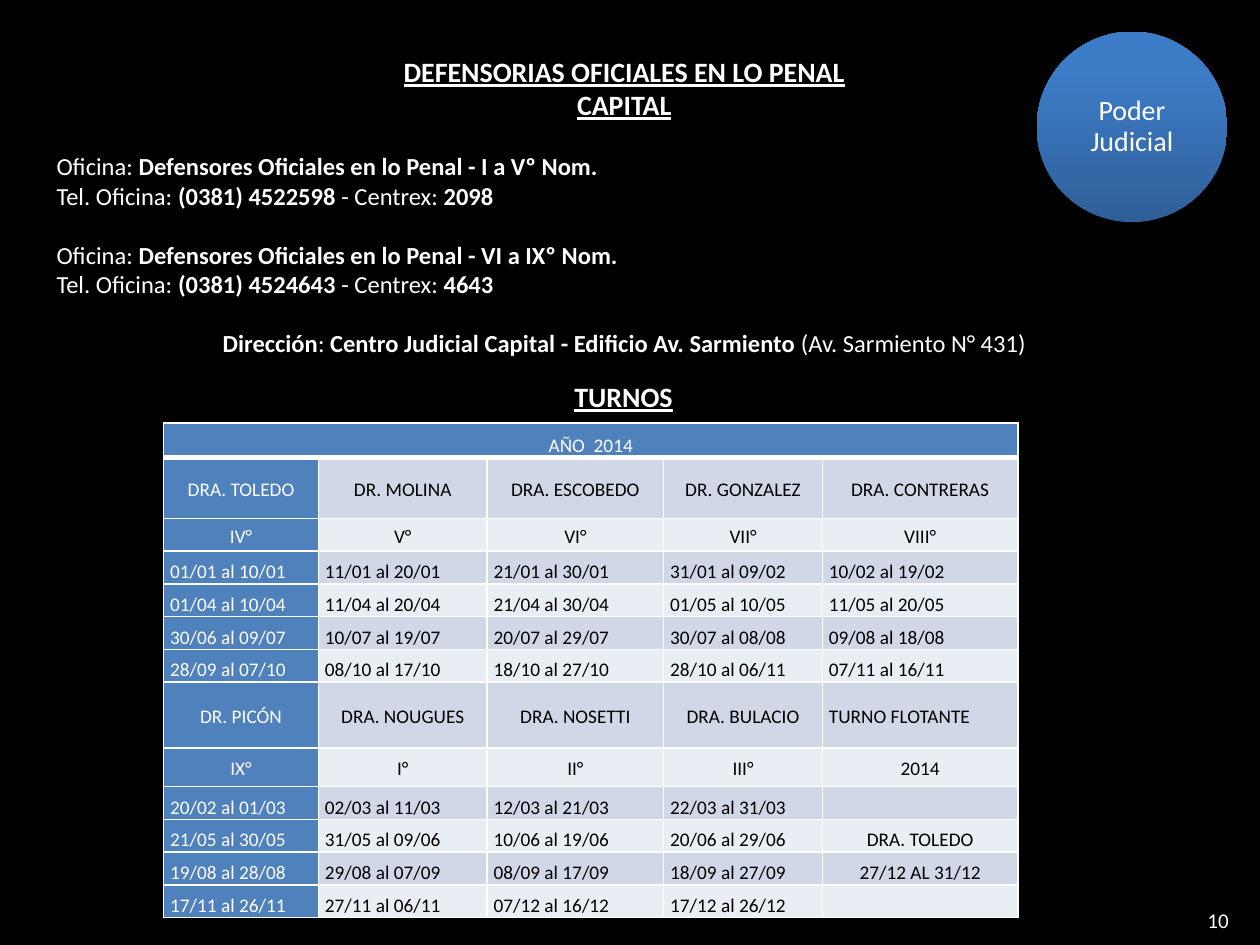
from lxml.etree import SubElement
from pptx import Presentation
from pptx.dml.color import RGBColor
from pptx.enum.shapes import MSO_SHAPE
from pptx.enum.text import MSO_ANCHOR, PP_ALIGN
from pptx.oxml.ns import qn
from pptx.util import Cm, Pt

THEME = {
    "font": "Calibri",
    "black": RGBColor(0x00, 0x00, 0x00),
    "white": RGBColor(0xFF, 0xFF, 0xFF),
    "header": RGBColor(0x4F, 0x81, 0xBD),
    "bands": [RGBColor(0xE9, 0xED, 0xF4), RGBColor(0xD0, 0xD8, 0xE8)],
    "circle": [RGBColor(0x2F, 0x5F, 0x99), RGBColor(0x3D, 0x7C, 0xC7)],
    "title": Pt(16),
    "body": Pt(14),
    "number": Pt(12),
    "table": Pt(11),
}


def apply_format(target, **values):
    for name, value in values.items():
        setattr(target, name, value)


def add_run(paragraph, text, size, color=THEME["white"], **values):
    run = paragraph.add_run()
    run.text = text
    run.font.color.rgb = color
    apply_format(run.font, name=THEME["font"], size=size, **values)


presentation = Presentation()
apply_format(presentation, slide_width=Cm(25.4), slide_height=Cm(19.05))
slide = presentation.slides.add_slide(presentation.slide_layouts[6])
slide.background.fill.solid()
slide.background.fill.fore_color.rgb = THEME["black"]

details = slide.shapes.add_textbox(Cm(0.89), Cm(0.97), Cm(23.39), Cm(7.01)).text_frame
details.word_wrap = True
for index, title in enumerate(["DEFENSORIAS OFICIALES EN LO PENAL", "CAPITAL"]):
    paragraph = details.add_paragraph() if index else details.paragraphs[0]
    paragraph.alignment = PP_ALIGN.CENTER
    add_run(paragraph, title, THEME["title"], bold=True, underline=True)

offices = [
    ("I a Vº Nom.", "(0381) 4522598", "2098"),
    ("VI a IXº Nom.", "(0381) 4524643", "4643"),
]
detail_lines = []
for courts, telephone, extension in offices:
    detail_lines += [
        (PP_ALIGN.LEFT, 17, ["Oficina: ", f"Defensores Oficiales en lo Penal - {courts}"]),
        (PP_ALIGN.LEFT, 0, ["Tel. Oficina: ", telephone, " - Centrex: ", extension]),
    ]
address = ["", "Dirección", ": ", "Centro Judicial Capital - Edificio Av. Sarmiento", " (Av. Sarmiento N° 431)"]
detail_lines.append((PP_ALIGN.CENTER, 17, address))
for alignment, gap, segments in detail_lines:
    paragraph = details.add_paragraph()
    apply_format(paragraph, alignment=alignment, space_before=Pt(gap))
    for index, segment in enumerate(segments):
        if segment:
            add_run(paragraph, segment, THEME["body"], bold=index % 2 == 1)

table_rows = [
    ["AÑO  2014", "", "", "", ""],
    ["DRA. TOLEDO", "DR. MOLINA", "DRA. ESCOBEDO", "DR. GONZALEZ", "DRA. CONTRERAS"],
    ["IV°", "V°", "VI°", "VII°", "VIII°"],
    ["01/01 al 10/01", "11/01 al 20/01", "21/01 al 30/01", "31/01 al 09/02", "10/02 al 19/02"],
    ["01/04 al 10/04", "11/04 al 20/04", "21/04 al 30/04", "01/05 al 10/05", "11/05 al 20/05"],
    ["30/06 al 09/07", "10/07 al 19/07", "20/07 al 29/07", "30/07 al 08/08", "09/08 al 18/08"],
    ["28/09 al 07/10", "08/10 al 17/10", "18/10 al 27/10", "28/10 al 06/11", "07/11 al 16/11"],
    ["DR. PICÓN", "DRA. NOUGUES", "DRA. NOSETTI", "DRA. BULACIO", "TURNO FLOTANTE"],
    ["IX°", "I°", "II°", "III°", "2014"],
    ["20/02 al 01/03", "02/03 al 11/03", "12/03 al 21/03", "22/03 al 31/03", ""],
    ["21/05 al 30/05", "31/05 al 09/06", "10/06 al 19/06", "20/06 al 29/06", "DRA. TOLEDO"],
    ["19/08 al 28/08", "29/08 al 07/09", "08/09 al 17/09", "18/09 al 27/09", "27/12 AL 31/12"],
    ["17/11 al 26/11", "27/11 al 06/11", "07/12 al 16/12", "17/12 al 26/12", ""],
]
column_widths = [3.12, 3.4, 3.56, 3.2, 3.94]
special_heights = {0: 0.69, 1: 1.23, 7: 1.33, 8: 0.78}
row_heights = [special_heights.get(index, 0.66) for index in range(len(table_rows))]
middle_rows = {1, 2, 7, 8}

table = slide.shapes.add_table(
    len(table_rows), len(column_widths), Cm(3.3), Cm(8.53), Cm(sum(column_widths)), Cm(sum(row_heights))
).table
apply_format(table, first_row=False, horz_banding=False)
for column, width in zip(table.columns, column_widths):
    column.width = Cm(width)
for row_index, texts in enumerate(table_rows):
    table.rows[row_index].height = Cm(row_heights[row_index])
    for column_index, text in enumerate(texts):
        cell = table.cell(row_index, column_index)
        is_header = row_index == 0 or column_index == 0
        apply_format(
            cell,
            margin_left=Cm(0.13), margin_right=Cm(0.13), margin_top=0, margin_bottom=0,
            vertical_anchor=MSO_ANCHOR.MIDDLE if row_index in middle_rows else MSO_ANCHOR.BOTTOM,
        )
        properties = cell._tc.get_or_add_tcPr()
        for side in ["lnL", "lnR", "lnT", "lnB"]:
            width = 3 if row_index == 0 and side == "lnB" else 1
            border = SubElement(properties, qn(f"a:{side}"), w=str(Pt(width)))
            border_fill = SubElement(border, qn("a:solidFill"))
            SubElement(border_fill, qn("a:srgbClr"), val=str(THEME["white"]))
        cell.fill.solid()
        cell.fill.fore_color.rgb = THEME["header"] if is_header else THEME["bands"][row_index % 2]
        paragraph = cell.text_frame.paragraphs[0]
        is_left = " al " in text or text.startswith("TURNO")
        apply_format(paragraph, alignment=PP_ALIGN.LEFT if is_left else PP_ALIGN.CENTER, line_spacing=1.15)
        if text:
            add_run(paragraph, text, THEME["table"], THEME["white" if is_header else "black"])
        else:
            paragraph._p.get_or_add_endParaRPr().set("sz", str(int(THEME["table"].pt * 100)))
table.cell(0, 0).merge(table.cell(0, len(column_widths) - 1))

shifts = slide.shapes.add_textbox(Cm(11.33), Cm(7.52), Cm(2.51), Cm(0.94)).text_frame
shifts.word_wrap = False
add_run(shifts.paragraphs[0], "TURNOS", THEME["title"], bold=True, underline=True)

page_number = slide.shapes.add_textbox(Cm(19.1), Cm(18.03), Cm(5.92), Cm(1.02)).text_frame
apply_format(page_number, word_wrap=True, vertical_anchor=MSO_ANCHOR.MIDDLE)
page_number.paragraphs[0].alignment = PP_ALIGN.RIGHT
add_run(page_number.paragraphs[0], "10", THEME["number"])

circle = slide.shapes.add_shape(MSO_SHAPE.OVAL, Cm(20.9), Cm(0.64), Cm(3.84), Cm(3.84))
circle.shadow.inherit = False
circle.line.fill.background()
circle.fill.gradient()
circle.fill.gradient_angle = 90
for stop, color, position in zip(circle.fill.gradient_stops, THEME["circle"], [0, 0.8]):
    stop.color.rgb = color
    stop.position = position
margins = {f"margin_{side}": Cm(0.05) for side in ["left", "right", "top", "bottom"]}
apply_format(circle.text_frame, word_wrap=True, vertical_anchor=MSO_ANCHOR.MIDDLE, **margins)
paragraph = circle.text_frame.paragraphs[0]
apply_format(paragraph, alignment=PP_ALIGN.CENTER, line_spacing=0.9)
add_run(paragraph, "Poder Judicial", THEME["title"])

presentation.save("out.pptx")
